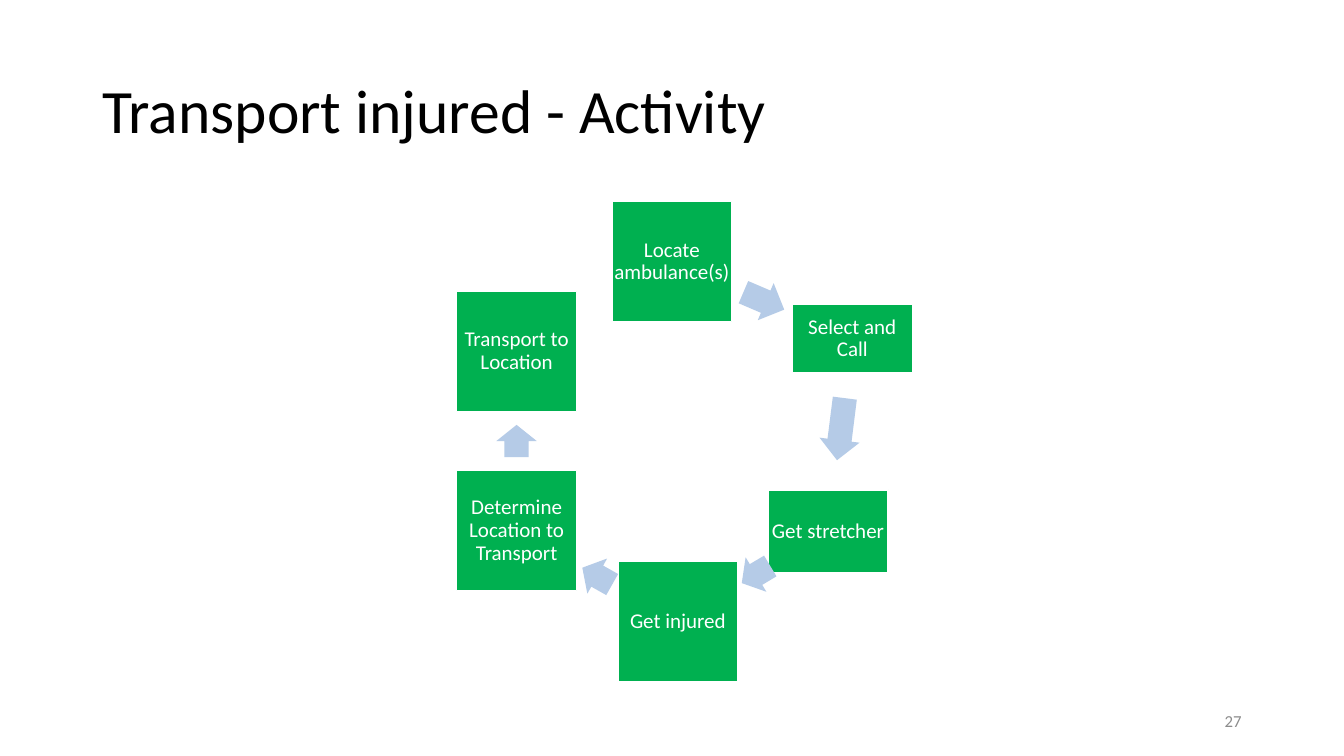
from dataclasses import dataclass
from math import atan2, degrees

from pptx import Presentation
from pptx.dml.color import RGBColor
from pptx.enum.shapes import MSO_SHAPE as Preset
from pptx.enum.text import MSO_ANCHOR as Anchor, PP_ALIGN as Align
from pptx.util import Inches, Pt

# Square grid: 160 columns by 90 rows
COLUMNS, ROWS = 160, 90
WIDTH, HEIGHT = Inches(13.333), Inches(7.5)
COLORS = {"title": "000000", "step": "00B050", "arrow": "B5CBE7",
          "white": "FFFFFF", "number": "8C8C8C"}
FONT = "Calibri"
STEP_WIDTH = 14.28
ARROW_BREADTH = 4.8


@dataclass(frozen=True)
class Step:
    label: str
    column: float  # centre
    row: float  # centre
    height: float = STEP_WIDTH


@dataclass(frozen=True)
class Arrow:
    length: float
    share: float  # place of the centre on the way to the next step


STEPS = [
    Step("Locate ambulance(s)", 79.98, 31.14),
    Step("Select and Call", 101.46, 40.32, 8.16),
    Step("Get stretcher", 98.58, 63.24, 9.84),
    Step("Get injured", 80.7, 73.98),
    Step("Determine Location to Transport", 61.5, 63.18),
    Step("Transport to Location", 61.5, 41.82),
]
ARROWS = [Arrow(5.28, 0.51), Arrow(7.44, 0.47), Arrow(3.96, 0.48),
          Arrow(4.08, 0.5), Arrow(3.84, 0.5)]


def across(columns: float) -> int:
    return round(WIDTH * columns / COLUMNS)


def down(rows: float) -> int:
    return round(HEIGHT * rows / ROWS)


def color(name: str) -> RGBColor:
    return RGBColor.from_string(COLORS[name])


def write(holder, text: str, size: float, ink: str, align: Align, spacing: float = 1) -> None:
    frame = holder.text_frame
    frame.word_wrap = True
    frame.vertical_anchor = Anchor.MIDDLE
    paragraph = frame.paragraphs[0]
    paragraph.text = text
    paragraph.alignment = align
    paragraph.line_spacing = spacing
    paragraph.font.name = FONT
    paragraph.font.size = Pt(size)
    paragraph.font.color.rgb = color(ink)


def add_centred(slide, preset: Preset, column: float, row: float,
                width: float, height: float, fill: str):
    block = slide.shapes.add_shape(
        preset, across(column - width / 2), down(row - height / 2),
        across(width), down(height))
    block.shadow.inherit = False
    block.fill.solid()
    block.fill.fore_color.rgb = color(fill)
    return block


def draw_step(slide, step: Step) -> None:
    box = add_centred(slide, Preset.RECTANGLE, step.column, step.row,
                      STEP_WIDTH, step.height, "step")
    box.line.color.rgb = color("white")
    box.line.width = Pt(1)
    frame = box.text_frame
    frame.margin_left = frame.margin_right = Inches(0.02)
    frame.margin_top = frame.margin_bottom = Inches(0.02)
    write(box, step.label, 15, "white", Align.CENTER, 0.9)


def draw_arrow(slide, arrow: Arrow, start: Step, end: Step) -> None:
    run, drop = end.column - start.column, end.row - start.row
    pointer = add_centred(slide, Preset.RIGHT_ARROW,
                          start.column + run * arrow.share,
                          start.row + drop * arrow.share,
                          arrow.length, ARROW_BREADTH, "arrow")
    pointer.line.fill.background()
    pointer.adjustments[0] = 0.6
    pointer.adjustments[1] = 0.5
    pointer.rotation = degrees(atan2(drop, run)) % 360


def main() -> None:
    deck = Presentation()
    deck.slide_width, deck.slide_height = WIDTH, HEIGHT
    slide = deck.slides.add_slide(deck.slide_layouts[6])

    # Title
    title = slide.shapes.add_textbox(across(11), down(4.8), across(138), down(17.4))
    write(title, "Transport injured - Activity", 44, "title", Align.LEFT, 0.9)

    # Ring of steps, each arrow lying over the step before it
    draw_step(slide, STEPS[0])
    for arrow, start, end in zip(ARROWS, STEPS, STEPS[1:]):
        draw_arrow(slide, arrow, start, end)
        draw_step(slide, end)

    # Slide number
    number = slide.shapes.add_textbox(across(113), down(83.4), across(36), down(4.8))
    write(number, "27", 12, "number", Align.RIGHT)

    deck.save("out.pptx")


if __name__ == "__main__":
    main()
